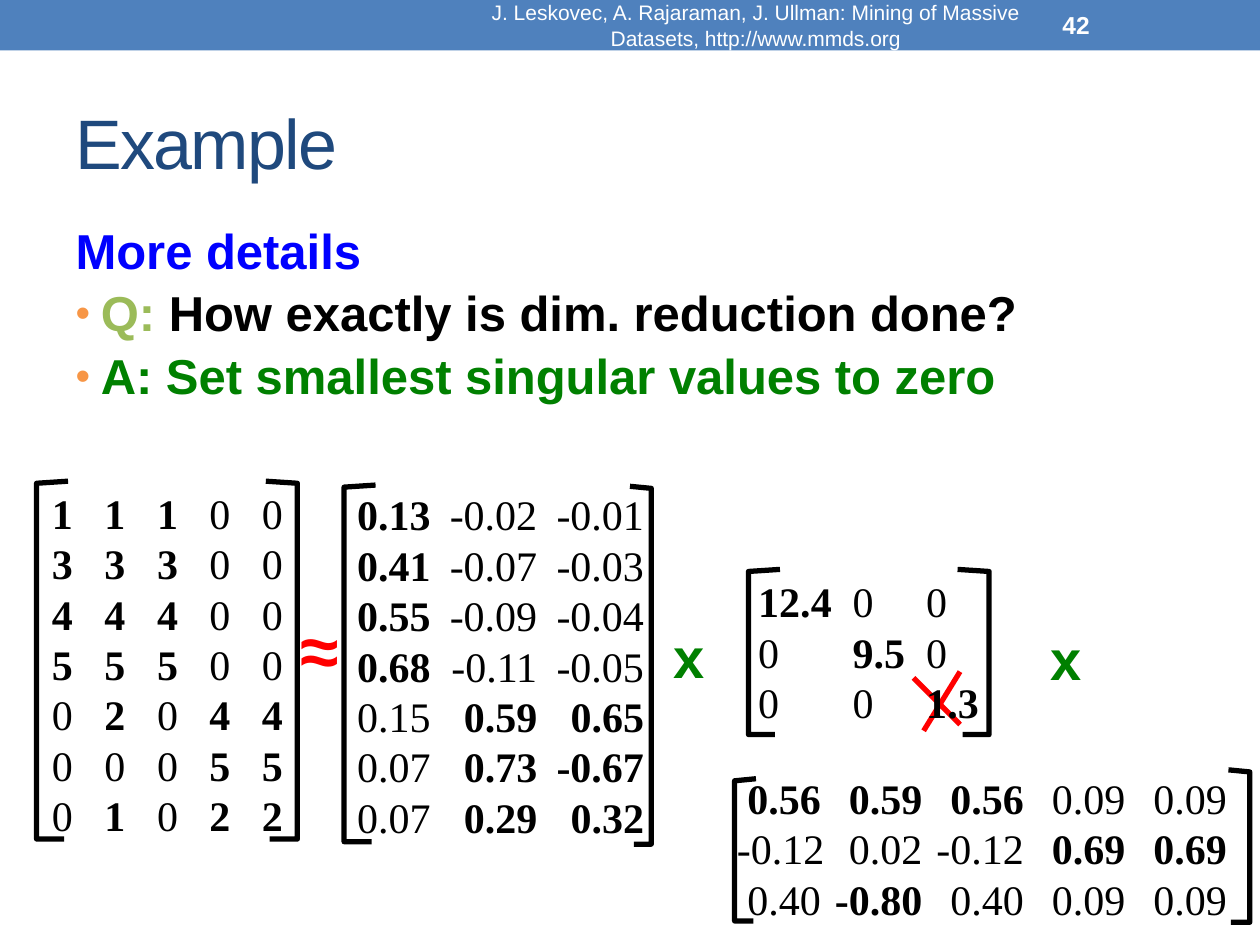
from dataclasses import dataclass
from itertools import groupby

import pptx
import pptx.dml.color
import pptx.enum.shapes
import pptx.enum.text
import pptx.oxml.ns
import pptx.util
from lxml import etree

Pt = pptx.util.Pt
Align = pptx.enum.text.PP_ALIGN
Anchor = pptx.enum.text.MSO_ANCHOR
qn = pptx.oxml.ns.qn


@dataclass(frozen=True)
class Theme:
    sans: str = "Arial"
    serif: str = "Times New Roman"
    band: str = "4F81BD"
    heading: str = "1F497D"
    blue: str = "0000FF"
    lime: str = "9BBB59"
    green: str = "008000"
    bullet: str = "F79646"
    red: str = "FF0000"
    black: str = "000000"
    white: str = "FFFFFF"
    title_size: int = 40
    body_size: int = 28
    matrix_size: int = 24
    times_size: int = 32
    footer_size: int = 12
    number_size: int = 14
    stroke: int = 3


@dataclass(frozen=True)
class Box:
    left: float
    top: float
    width: float
    height: float

    def lengths(self) -> tuple:
        return Pt(self.left), Pt(self.top), Pt(self.width), Pt(self.height)


@dataclass(frozen=True)
class Span:
    text: str
    color: str
    bold: bool = True


@dataclass(frozen=True)
class Label:
    box: Box
    span: Span
    size: int
    align: Align = Align.LEFT
    wrap: bool = False


@dataclass(frozen=True)
class Bracket:
    tip: float
    spine: float
    foot: float
    top: float
    bottom: float


@dataclass(frozen=True)
class Matrix:
    box: Box
    inset: float
    stops: tuple
    stop_align: str
    rows: tuple
    leading_tab: bool = False


THEME = Theme()

BULLETS = (
    (Span("More details", THEME.blue),),
    (Span("Q: ", THEME.lime), Span("How exactly is dim. reduction done?", THEME.black)),
    (Span("A: Set smallest singular values to zero", THEME.green),),
)

LABELS = (
    Label(Box(270, 1.44, 324, 25.92),
          Span("J. Leskovec, A. Rajaraman, J. Ullman: Mining of Massive Datasets, "
               "http://www.mmds.org", THEME.white, False),
          THEME.footer_size, Align.CENTER, True),
    Label(Box(600, 1.44, 84, 25.92), Span("42", THEME.white), THEME.number_size, wrap=True),
    Label(Box(378, 352, 31.7, 46), Span("x", THEME.green), THEME.times_size),
    Label(Box(593.3, 352.8, 31.7, 46), Span("x", THEME.green), THEME.times_size),
    Label(Box(164.9, 342.7, 36.7, 55.4), Span("≈", THEME.red), THEME.title_size),
)

STRIKES = ((527.8, 417.6, 548.6, 383.8), (522, 387.4, 548.6, 414))

BRACKETS = (
    Bracket(38.9, 20.9, 36.7, 275, 479.5),
    Bracket(151.9, 169.9, 154.1, 275, 479.5),
    Bracket(214.6, 196.6, 212.4, 277.2, 481),
    Bracket(360, 372.2, 362.2, 277.9, 482.4),
    Bracket(445.7, 427.7, 442.8, 325.4, 419.8),
    Bracket(547.2, 565.2, 550.1, 325.4, 419.8),
    Bracket(432, 419.8, 430.6, 445, 526.3),
    Bracket(702, 714.2, 703.4, 439.9, 527),
)

MATRICES = (
    Matrix(Box(18, 275, 156, 211), 11.7, (30, 60, 90, 120), "l",
           ("*1 *1 *1 0 0", "*3 *3 *3 0 0", "*4 *4 *4 0 0", "*5 *5 *5 0 0",
            "0 *2 0 *4 *4", "0 0 0 *5 *5", "0 *1 0 *2 *2")),
    Matrix(Box(187.2, 275.8, 198, 211), 16.8, (103, 164), "r",
           ("*0.13 -0.02 -0.01", "*0.41 -0.07 -0.03", "*0.55 -0.09 -0.04",
            "*0.68 -0.11 -0.05", "0.15 *0.59 *0.65", "0.07 *0.73 *-0.67",
            "0.07 *0.29 *0.32")),
    Matrix(Box(426.2, 325.4, 156, 94.3), 7.2, (54, 96), "l",
           ("*12.4 0 0", "0 *9.5 0", "0 0 *1.3")),
    Matrix(Box(414, 437.8, 306, 94.3), 7.2, tuple(range(48, 281, 58)), "r",
           ("*0.56 *0.59 *0.56 0.09 0.09", "-0.12 0.02 -0.12 *0.69 *0.69",
            "0.40 *-0.80 0.40 0.09 0.09"), leading_tab=True),
)


def rgb(color: str) -> pptx.dml.color.RGBColor:
    return pptx.dml.color.RGBColor.from_string(color)


def write_spans(paragraph, spans, font: str, size: int) -> None:
    for span in spans:
        run = paragraph.add_run()
        run.text = span.text
        run.font.name = font
        run.font.size = Pt(size)
        run.font.bold = span.bold
        run.font.color.rgb = rgb(span.color)


def place(placeholder, box: Box) -> None:
    placeholder.left, placeholder.top, placeholder.width, placeholder.height = box.lengths()
    placeholder.text_frame.auto_size = pptx.enum.text.MSO_AUTO_SIZE.NONE


def draw_band(slide, box: Box) -> None:
    band = slide.shapes.add_shape(pptx.enum.shapes.MSO_SHAPE.RECTANGLE, *box.lengths())
    band.shadow.inherit = False
    band.fill.solid()
    band.fill.fore_color.rgb = rgb(THEME.band)
    band.line.fill.background()


def fill_title(title) -> None:
    place(title, Box(36, 42, 648, 78))
    title.text_frame.vertical_anchor = Anchor.MIDDLE
    heading = title.text_frame.paragraphs[0]
    heading.alignment = Align.LEFT
    write_spans(heading, [Span("Example", THEME.heading, False)], THEME.sans, THEME.title_size)
    heading.runs[0].font._element.set("spc", "-100")


def fill_body(body) -> None:
    place(body, Box(36, 126, 648, 384))
    frame = body.text_frame
    for index, spans in enumerate(BULLETS):
        paragraph = frame.add_paragraph() if index else frame.paragraphs[0]
        write_spans(paragraph, spans, THEME.sans, THEME.body_size)
        paragraph.line_spacing = 0.9
        paragraph.space_before = Pt(0.2 * THEME.body_size)
        properties = paragraph._p.get_or_add_pPr()
        properties.set("marL", str(Pt(14.4)))
        properties.set("indent", str(-Pt(14.4)))
        if index == 0:
            etree.SubElement(properties, qn("a:buNone"))
            continue
        tint = etree.SubElement(properties, qn("a:buClr"))
        etree.SubElement(tint, qn("a:srgbClr"), val=THEME.bullet)
        etree.SubElement(properties, qn("a:buSzPct"), val="85000")
        etree.SubElement(properties, qn("a:buFont"), typeface=THEME.sans)
        etree.SubElement(properties, qn("a:buChar"), char="•")


def draw_label(slide, label: Label) -> None:
    frame = slide.shapes.add_textbox(*label.box.lengths()).text_frame
    frame.word_wrap = label.wrap
    frame.vertical_anchor = Anchor.MIDDLE
    frame.paragraphs[0].alignment = label.align
    write_spans(frame.paragraphs[0], [label.span], THEME.sans, label.size)


def draw_strike(slide, ends: tuple) -> None:
    strike = slide.shapes.add_connector(
        pptx.enum.shapes.MSO_CONNECTOR.STRAIGHT, *map(Pt, ends))
    strike.line.color.rgb = rgb(THEME.red)
    strike.line.width = Pt(THEME.stroke)
    etree.SubElement(strike._element.spPr, qn("a:effectLst"))


def draw_bracket(slide, bracket: Bracket) -> None:
    builder = slide.shapes.build_freeform(Pt(bracket.tip), Pt(bracket.top))
    corners = ((bracket.spine, bracket.top + 1.2), (bracket.spine, bracket.bottom),
               (bracket.foot, bracket.bottom))
    builder.add_line_segments([(Pt(x), Pt(y)) for x, y in corners], close=False)
    outline = builder.convert_to_shape()
    outline.shadow.inherit = False
    outline.fill.background()
    outline.line.color.rgb = rgb(THEME.black)
    outline.line.width = Pt(THEME.stroke)


def draw_matrix(slide, matrix: Matrix) -> None:
    frame = slide.shapes.add_textbox(*matrix.box.lengths()).text_frame
    frame.word_wrap = True
    frame.margin_left = Pt(matrix.inset)
    for index, row in enumerate(matrix.rows):
        paragraph = frame.add_paragraph() if index else frame.paragraphs[0]
        stops = etree.SubElement(paragraph._p.get_or_add_pPr(), qn("a:tabLst"))
        for stop in matrix.stops:
            etree.SubElement(stops, qn("a:tab"), pos=str(Pt(stop)), algn=matrix.stop_align)
        cells = [("\t" if column or matrix.leading_tab else "", cell)
                 for column, cell in enumerate(row.split())]
        spans = [Span("".join(tab + cell.lstrip("*") for tab, cell in group), THEME.black, bold)
                 for bold, group in groupby(cells, lambda item: item[1].startswith("*"))]
        write_spans(paragraph, spans, THEME.serif, THEME.matrix_size)


def main() -> None:
    deck = pptx.Presentation()
    deck.slide_width, deck.slide_height = Pt(720), Pt(540)
    slide = deck.slides.add_slide(deck.slide_layouts[1])
    draw_band(slide, Box(0, 0, 720, 28.8))
    fill_title(slide.shapes.title)
    fill_body(slide.placeholders[1])
    for ends in STRIKES:
        draw_strike(slide, ends)
    for bracket in BRACKETS:
        draw_bracket(slide, bracket)
    for label in LABELS:
        draw_label(slide, label)
    for matrix in MATRICES:
        draw_matrix(slide, matrix)
    deck.save("out.pptx")


if __name__ == "__main__":
    main()
